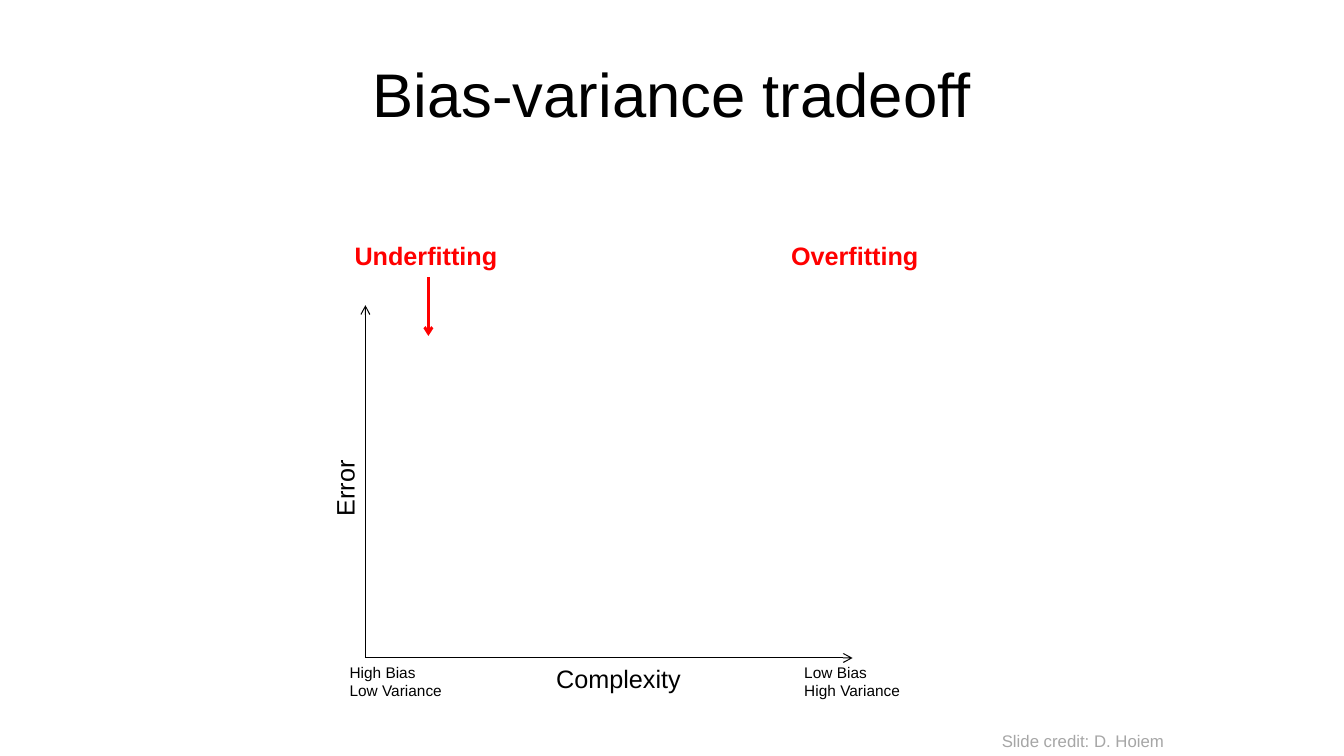
from lxml import etree
from pptx import Presentation
from pptx.dml.color import RGBColor
from pptx.enum.shapes import MSO_CONNECTOR
from pptx.enum.text import MSO_ANCHOR, MSO_AUTO_SIZE, PP_ALIGN
from pptx.oxml.ns import qn
from pptx.util import Pt

STRAIGHT = MSO_CONNECTOR.STRAIGHT
MIDDLE = MSO_ANCHOR.MIDDLE
CENTER = PP_ALIGN.CENTER
GROW = MSO_AUTO_SIZE.SHAPE_TO_FIT_TEXT
TITLE_ONLY = 5

BLACK, RED, GRAY = "000000", "FF0000", "A6A6A6"
ORIGIN = (261, 470)
AXIS_TOP, AXIS_RIGHT = 218, 609

FITTING = {"size": Pt(18), "bold": True}
AXIS_NAME = {"size": Pt(18)}
AXIS_END = {"size": Pt(11)}
CREDIT = {"size": Pt(12)}

# Left, top, width, height, lines, colour, font format, rotation
LABELS = [
    (246.2, 167.8, 117.4, 28.8, ["Underfitting"], RED, FITTING, 0),
    (558, 167.8, 106.6, 28.8, ["Overfitting"], RED, FITTING, 0),
    (390.2, ORIGIN[1], 104.4, 28.8, ["Complexity"], BLACK, AXIS_NAME, 0),
    (567.4, ORIGIN[1], 84.2, 33.8, ["Low Bias", "High Variance"], BLACK, AXIS_END, 0),
    (242.6, ORIGIN[1], 82.1, 33.8, ["High Bias", "Low Variance"], BLACK, AXIS_END, 0),
    (218.9, 334.1, 54.7, 28.8, ["Error"], BLACK, AXIS_NAME, 270),
    (708.5, 518.4, 131, 21.6, ["Slide credit: D. Hoiem"], GRAY, CREDIT, 0),
]

# Start, end, colour, width
ARROWS = [
    ((306, 198), (306, 240), RED, 2),
    (ORIGIN, (ORIGIN[0], AXIS_TOP), BLACK, 0.75),
    (ORIGIN, (AXIS_RIGHT, ORIGIN[1]), BLACK, 0.75),
]


def color(hex_value):
    return RGBColor.from_string(hex_value)


def set_values(target, values):
    for name, value in values.items():
        setattr(target, name, value)


def write(para, text, hex_value, font_format):
    span = para.add_run()
    span.text = text
    set_values(span.font, {"name": "Arial", **font_format})
    span.font.color.rgb = color(hex_value)


def add_title(page, text):
    box = page.shapes.title
    set_values(box, {"left": Pt(48), "top": Pt(21.6),
                     "width": Pt(864), "height": Pt(90)})
    box.text_frame.vertical_anchor = MIDDLE
    para = box.text_frame.paragraphs[0]
    para.alignment = CENTER
    write(para, text, BLACK, {"size": Pt(44)})


def add_label(page, left, top, width, height, lines, hex_value, font_format, rotation):
    box = page.shapes.add_textbox(Pt(left), Pt(top), Pt(width), Pt(height))
    box.rotation = rotation
    set_values(box.text_frame, {"word_wrap": False, "auto_size": GROW})
    for index, text in enumerate(lines):
        para = box.text_frame.add_paragraph() if index else box.text_frame.paragraphs[0]
        write(para, text, hex_value, font_format)


def add_arrow(page, start, end, hex_value, width):
    points = [Pt(value) for value in (*start, *end)]
    arrow = page.shapes.add_connector(STRAIGHT, *points)
    arrow.line.color.rgb = color(hex_value)
    arrow.line.width = Pt(width)
    # Open arrowhead, no shadow
    etree.SubElement(arrow.line._get_or_add_ln(), qn("a:tailEnd"), type="arrow")
    etree.SubElement(arrow._element.spPr, qn("a:effectLst"))


def main():
    deck = Presentation()
    set_values(deck, {"slide_width": Pt(960), "slide_height": Pt(540)})
    page = deck.slides.add_slide(deck.slide_layouts[TITLE_ONLY])

    add_title(page, "Bias-variance tradeoff")
    for arrow in ARROWS:
        add_arrow(page, *arrow)
    for label in LABELS:
        add_label(page, *label)

    deck.save("out.pptx")


if __name__ == "__main__":
    main()
